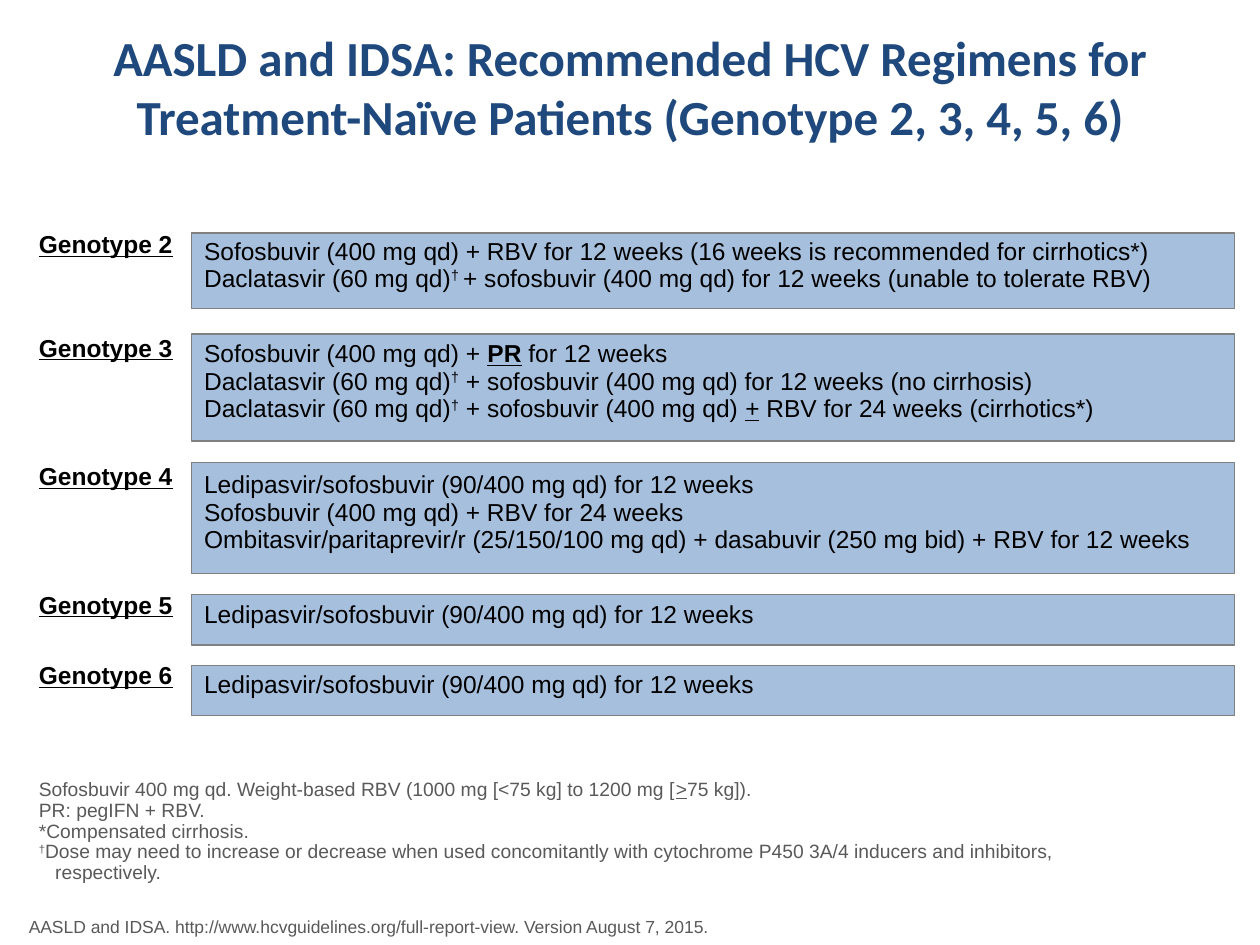
from dataclasses import dataclass

from lxml.etree import SubElement
from pptx import Presentation
from pptx.dml.color import RGBColor
from pptx.enum.shapes import MSO_SHAPE
from pptx.enum.text import MSO_ANCHOR, PP_ALIGN
from pptx.oxml.ns import qn
from pptx.util import Inches, Pt


@dataclass(frozen=True)
class Theme:
    heading_font: str = "Calibri"
    body_font: str = "Arial"
    heading: RGBColor = RGBColor(0x1F, 0x49, 0x7D)
    body: RGBColor = RGBColor(0, 0, 0)
    note: RGBColor = RGBColor(0x59, 0x59, 0x59)
    panel: RGBColor = RGBColor(0x4F, 0x81, 0xBD)
    panel_line: RGBColor = RGBColor(0x80, 0x80, 0x80)
    heading_size: int = 28
    body_size: int = 14
    note_size: int = 11
    source_size: int = 10


@dataclass(frozen=True)
class Span:
    text: str
    bold: bool = False
    underline: bool = False
    raised: bool = False


@dataclass(frozen=True)
class Genotype:
    number: int
    panel_top: float
    panel_height: float
    table_top: float
    label_top: float
    regimens: list


LABEL_LEFT, LABEL_WIDTH = 0.21, 1.31
TABLE_LEFT = 0.2
PANEL_LEFT, PANEL_WIDTH = 1.52, 8.28
NO_GRID_STYLE = "{2D5ABB26-0587-4C30-8999-92F81FD0307C}"

DAGGER = Span("†", raised=True)
DACLATASVIR = [Span("Daclatasvir (60 mg qd)"), DAGGER]
LEDIPASVIR = [Span("Ledipasvir/sofosbuvir (90/400 mg qd) for 12 weeks")]

GENOTYPES = [
    Genotype(2, 1.85, 0.6, 1.84, 1.77, [
        [Span("Sofosbuvir (400 mg qd) + RBV for 12 weeks (16 weeks is recommended for cirrhotics*)")],
        [Span("Daclatasvir (60 mg qd)"), Span("† ", raised=True),
         Span("+ sofosbuvir (400 mg qd) for 12 weeks (unable to tolerate RBV)")],
    ]),
    Genotype(3, 2.65, 0.85, 2.65, 2.59, [
        [Span("Sofosbuvir (400 mg qd) + "), Span("PR", bold=True, underline=True), Span(" for 12 weeks")],
        [*DACLATASVIR, Span(" + sofosbuvir (400 mg qd) for 12 weeks (no cirrhosis)")],
        [*DACLATASVIR, Span(" + sofosbuvir (400 mg qd) "), Span("+", underline=True),
         Span(" RBV for 24 weeks (cirrhotics*)")],
    ]),
    Genotype(4, 3.67, 0.88, 3.69, 3.61, [
        LEDIPASVIR,
        [Span("Sofosbuvir (400 mg qd) + RBV for 24 weeks")],
        [Span("Ombitasvir/paritaprevir/r (25/150/100 mg qd) + dasabuvir (250 mg bid) + RBV for 12 weeks")],
    ]),
    Genotype(5, 4.72, 0.4, 4.72, 4.63, [LEDIPASVIR]),
    Genotype(6, 5.28, 0.4, 5.28, 5.19, [LEDIPASVIR]),
]

FOOTNOTES = [
    [Span("Sofosbuvir 400 mg qd. Weight-based RBV (1000 mg [<75 kg] to 1200 mg ["),
     Span(">", underline=True), Span("75 kg]).")],
    [Span("PR: pegIFN + RBV.")],
    [Span("*Compensated cirrhosis.")],
    [DAGGER, Span("Dose may need to increase or decrease when used concomitantly "
                  "with cytochrome P450 3A/4 inducers and inhibitors,")],
    [Span("respectively.")],
]


class SlideBuilder:
    """Draws styled elements on the current slide."""

    def __init__(self, slide, theme):
        self.slide = slide
        self.theme = theme

    def add_lines(self, frame, lines, size, color, font=None):
        for index, spans in enumerate(lines):
            paragraph = frame.paragraphs[0] if index == 0 else frame.add_paragraph()
            for span in spans:
                run = paragraph.add_run()
                run.text = span.text
                run.font.name = font or self.theme.body_font
                run.font.size = Pt(size)
                run.font.color.rgb = color
                run.font.bold = span.bold
                run.font.underline = span.underline
                if span.raised:
                    run._r.get_or_add_rPr().set("baseline", "30000")

    def text(self, left, top, width, height, lines, size, color, font=None):
        box = self.slide.shapes.add_textbox(Inches(left), Inches(top), Inches(width), Inches(height))
        frame = box.text_frame
        frame.word_wrap = True
        self.add_lines(frame, lines, size, color, font)
        return frame

    def title(self, lines):
        theme = self.theme
        frame = self.text(0.5, 0.17, 9, 1.25, [[Span(line, bold=True)] for line in lines],
                          theme.heading_size, theme.heading, theme.heading_font)
        for paragraph in frame.paragraphs:
            paragraph.alignment = PP_ALIGN.CENTER

    def panel(self, top, height):
        shape = self.slide.shapes.add_shape(
            MSO_SHAPE.RECTANGLE, Inches(PANEL_LEFT), Inches(top), Inches(PANEL_WIDTH), Inches(height))
        shape.shadow.inherit = False
        shape.fill.solid()
        shape.fill.fore_color.rgb = self.theme.panel
        color = shape._element.spPr.find(qn("a:solidFill")).find(qn("a:srgbClr"))
        SubElement(color, qn("a:alpha")).set("val", "50000")
        shape.line.color.rgb = self.theme.panel_line
        shape.line.width = Pt(0.75)

    def regimen_table(self, top, height, regimens):
        widths = (PANEL_LEFT - TABLE_LEFT, PANEL_WIDTH)
        table = self.slide.shapes.add_table(
            1, 2, Inches(TABLE_LEFT), Inches(top), Inches(sum(widths)), Inches(height)).table
        table.first_row = False
        table.horz_banding = False
        table._tbl.tblPr.find(qn("a:tableStyleId")).text = NO_GRID_STYLE
        for column, width in zip(table.columns, widths):
            column.width = Inches(width)
        for cell in table.iter_cells():
            cell.fill.background()
        self.add_lines(table.cell(0, 1).text_frame, regimens, self.theme.body_size, self.theme.body)

    def genotype(self, row):
        self.panel(row.panel_top, row.panel_height)
        self.regimen_table(row.table_top, 0.12 + 0.23 * len(row.regimens), row.regimens)
        label = Span(f"Genotype {row.number}", bold=True, underline=True)
        self.text(LABEL_LEFT, row.label_top, LABEL_WIDTH, 0.34, [[label]],
                  self.theme.body_size, self.theme.body)

    def footnotes(self, lines):
        frame = self.text(LABEL_LEFT, 6.14, 9.59, 0.93, lines, self.theme.note_size, self.theme.note)
        for paragraph in frame.paragraphs:
            paragraph.line_spacing = 0.9
        frame.paragraphs[-1]._p.get_or_add_pPr().set("marL", str(Inches(0.13)))

    def source(self, citation):
        frame = self.text(0.13, 7.22, 9.22, 0.22, [[Span(citation)]],
                          self.theme.source_size, self.theme.note)
        frame.vertical_anchor = MSO_ANCHOR.BOTTOM
        frame.margin_right = frame.margin_bottom = 0


def main():
    presentation = Presentation()
    presentation.slide_width = Inches(10)
    presentation.slide_height = Inches(7.5)
    slide = presentation.slides.add_slide(presentation.slide_layouts[6])
    builder = SlideBuilder(slide, Theme())
    builder.title(["AASLD and IDSA: Recommended HCV Regimens for",
                   "Treatment-Naïve Patients (Genotype 2, 3, 4, 5, 6)"])
    builder.footnotes(FOOTNOTES)
    for row in GENOTYPES:
        builder.genotype(row)
    builder.source("AASLD and IDSA. http://www.hcvguidelines.org/full-report-view. Version August 7, 2015.")
    presentation.save("out.pptx")


if __name__ == "__main__":
    main()
